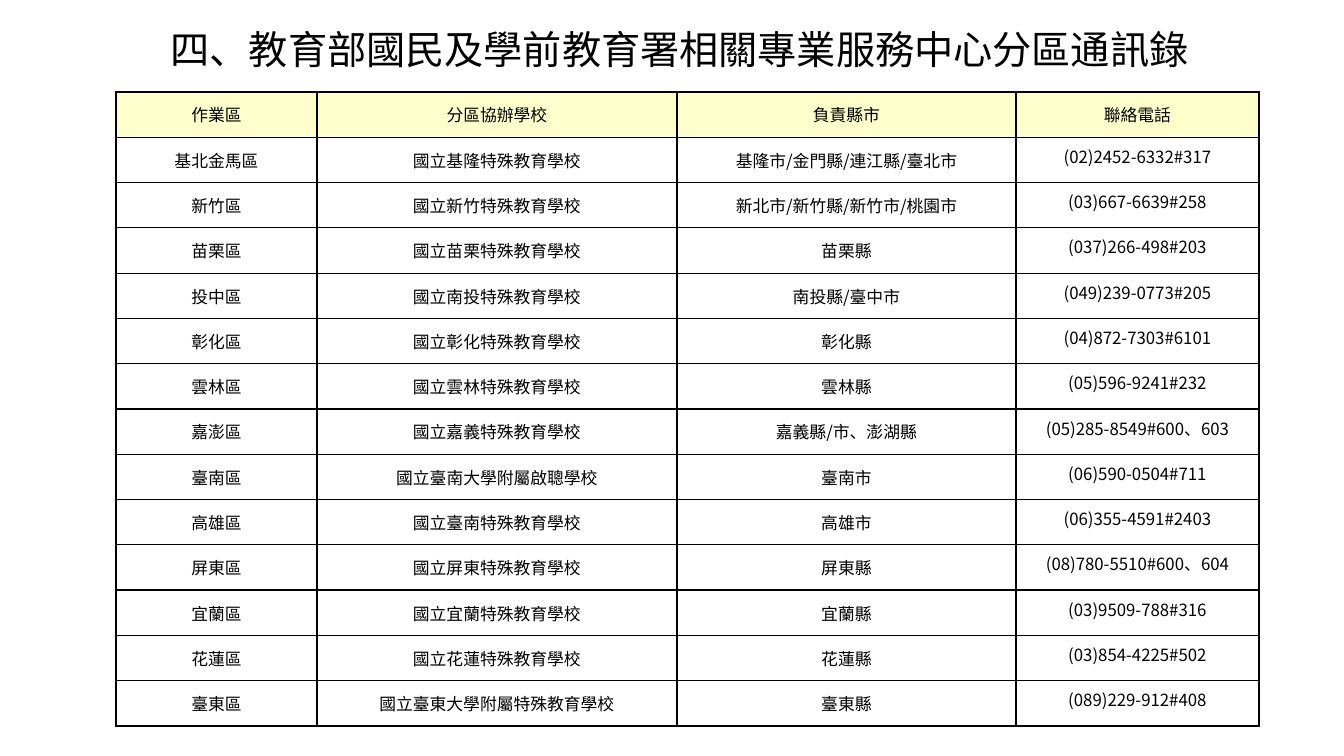
from dataclasses import dataclass

from lxml.etree import SubElement
from pptx import Presentation
from pptx.dml.color import RGBColor
from pptx.enum.text import MSO_ANCHOR, MSO_AUTO_SIZE, PP_ALIGN
from pptx.oxml import parse_xml
from pptx.oxml.ns import nsdecls, qn
from pptx.slide import Slide
from pptx.table import _Cell
from pptx.util import Emu, Pt

SLIDE_W, SLIDE_H = 1344, 756
SCALE = 12192000 / SLIDE_W


def px(n: float) -> Emu:
    return Emu(round(n * SCALE))


@dataclass(frozen=True)
class Theme:
    font: str = "Noto Sans CJK SC"
    ink: str = "000000"
    header_fill: str = "FFFFCC"
    title_pt: int = 28
    table_pt: int = 12
    border_pt: int = 1


@dataclass(frozen=True)
class Box:
    left: int
    top: int
    width: int
    height: int


@dataclass(frozen=True)
class Contact:
    area: str
    school: str
    counties: str
    phone: str


THEME = Theme()
TITLE = "四、教育部國民及學前教育署相關專業服務中心分區通訊錄"
TITLE_BOX = Box(116, 25, 1127, 57)
TABLE_BOX = Box(116, 92, 1143, 634)
COLUMNS = (201, 360, 339, 243)
CELL_INSET, PHONE_INSET = 6, 10

HEADER = Contact("作業區", "分區協辦學校", "負責縣市", "聯絡電話")
CONTACTS = (
    Contact("基北金馬區", "國立基隆特殊教育學校", "基隆市/金門縣/連江縣/臺北市", "(02)2452-6332#317"),
    Contact("新竹區", "國立新竹特殊教育學校", "新北市/新竹縣/新竹市/桃園市", "(03)667-6639#258"),
    Contact("苗栗區", "國立苗栗特殊教育學校", "苗栗縣", "(037)266-498#203"),
    Contact("投中區", "國立南投特殊教育學校", "南投縣/臺中市", "(049)239-0773#205"),
    Contact("彰化區", "國立彰化特殊教育學校", "彰化縣", "(04)872-7303#6101"),
    Contact("雲林區", "國立雲林特殊教育學校", "雲林縣", "(05)596-9241#232"),
    Contact("嘉澎區", "國立嘉義特殊教育學校", "嘉義縣/市、澎湖縣", "(05)285-8549#600、603"),
    Contact("臺南區", "國立臺南大學附屬啟聰學校", "臺南市", "(06)590-0504#711"),
    Contact("高雄區", "國立臺南特殊教育學校", "高雄市", "(06)355-4591#2403"),
    Contact("屏東區", "國立屏東特殊教育學校", "屏東縣", "(08)780-5510#600、604"),
    Contact("宜蘭區", "國立宜蘭特殊教育學校", "宜蘭縣", "(03)9509-788#316"),
    Contact("花蓮區", "國立花蓮特殊教育學校", "花蓮縣", "(03)854-4225#502"),
    Contact("臺東區", "國立臺東大學附屬特殊教育學校", "臺東縣", "(089)229-912#408"),
)


def set_text(tf, text: str, size: int) -> None:
    """Centre one paragraph and set Latin and East Asian fonts."""
    tf.text = text
    p = tf.paragraphs[0]
    p.alignment = PP_ALIGN.CENTER
    r = p.runs[0]
    r.font.size = Pt(size)
    r.font.color.rgb = RGBColor.from_string(THEME.ink)
    r.font.name = THEME.font
    SubElement(r._r.get_or_add_rPr(), qn("a:ea")).set("typeface", THEME.font)


def add_borders(cell: _Cell) -> None:
    tc_pr = cell._tc.get_or_add_tcPr()
    for side in ("lnL", "lnR", "lnT", "lnB"):
        tc_pr.append(parse_xml(
            f'<a:{side} {nsdecls("a")} w="{Pt(THEME.border_pt)}"><a:solidFill>'
            f'<a:srgbClr val="{THEME.ink}"/></a:solidFill></a:{side}>'))


def format_cell(cell: _Cell, text: str, is_header: bool, is_phone: bool) -> None:
    set_text(cell.text_frame, text, THEME.table_pt)
    cell.vertical_anchor = MSO_ANCHOR.MIDDLE
    cell.margin_top = cell.margin_bottom = 0
    cell.margin_left = cell.margin_right = px(PHONE_INSET if is_phone else CELL_INSET)
    if is_phone:
        cell.text_frame.paragraphs[0].line_spacing = Pt(THEME.table_pt)
    add_borders(cell)
    if is_header:
        cell.fill.solid()
        cell.fill.fore_color.rgb = RGBColor.from_string(THEME.header_fill)
    else:
        cell.fill.background()


def add_title(s: Slide) -> None:
    sp, b = s.shapes.title, TITLE_BOX
    sp.left, sp.top, sp.width, sp.height = px(b.left), px(b.top), px(b.width), px(b.height)
    tf = sp.text_frame
    tf.word_wrap = True
    tf.auto_size = MSO_AUTO_SIZE.SHAPE_TO_FIT_TEXT
    tf.vertical_anchor = MSO_ANCHOR.TOP
    tf.margin_top = tf.margin_bottom = 0
    set_text(tf, TITLE, THEME.title_pt)


def add_contact_table(s: Slide) -> None:
    rows, b = (HEADER, *CONTACTS), TABLE_BOX
    table = s.shapes.add_table(len(rows), len(COLUMNS), px(b.left), px(b.top),
                               px(b.width), px(b.height)).table
    table.first_row = table.horz_banding = False
    for column, width in zip(table.columns, COLUMNS):
        column.width = px(width)
    for row, contact in zip(table.rows, rows):
        row.height = px(b.height / len(rows))
        is_header = contact is HEADER
        texts = (contact.area, contact.school, contact.counties, contact.phone)
        for cell, text in zip(row.cells, texts):
            is_phone = text is contact.phone and not is_header
            format_cell(cell, text, is_header, is_phone)


def main() -> None:
    prs = Presentation()
    prs.slide_width, prs.slide_height = px(SLIDE_W), px(SLIDE_H)
    s = prs.slides.add_slide(prs.slide_layouts[5])
    # Heading
    add_title(s)
    # Contact list by area
    add_contact_table(s)
    prs.save("out.pptx")


if __name__ == "__main__":
    main()
